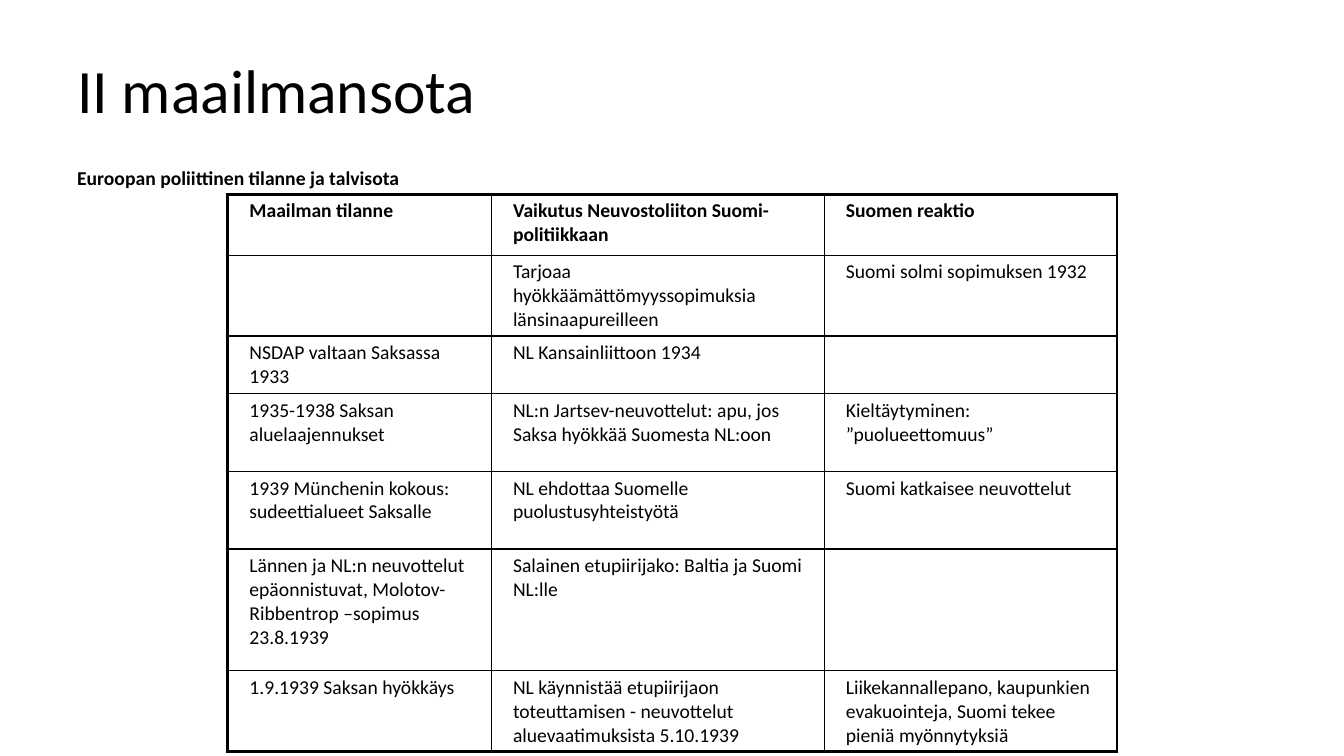
from lxml import etree
from pptx import Presentation
from pptx import util as u
from pptx.dml.color import RGBColor
from pptx.enum import text
from pptx.oxml.ns import qn

PX = 9525  # EMU per px, 96 px to the inch

TITLE = "II maailmansota"
SUBTITLE = "Euroopan poliittinen tilanne ja talvisota"
COLUMN_WIDTHS = [251, 317, 279]
ROW_HEIGHTS = [58, 77, 55, 74, 74, 116, 77]
ROWS = [
    ["Maailman tilanne", "Vaikutus Neuvostoliiton Suomi-politiikkaan", "Suomen reaktio"],
    ["", "Tarjoaa hyökkäämättömyyssopimuksia länsinaapureilleen",
     "Suomi solmi sopimuksen 1932"],
    ["NSDAP valtaan Saksassa 1933", "NL Kansainliittoon 1934", ""],
    ["1935-1938 Saksan aluelaajennukset",
     "NL:n Jartsev-neuvottelut: apu, jos Saksa hyökkää Suomesta NL:oon",
     "Kieltäytyminen: ”puolueettomuus”"],
    ["1939 Münchenin kokous: sudeettialueet Saksalle",
     "NL ehdottaa Suomelle puolustusyhteistyötä", "Suomi katkaisee neuvottelut"],
    ["Lännen ja NL:n neuvottelut epäonnistuvat, Molotov-Ribbentrop –sopimus 23.8.1939",
     "Salainen etupiirijako: Baltia ja Suomi NL:lle", ""],
    ["1.9.1939 Saksan hyökkäys",
     "NL käynnistää etupiirijaon toteuttamisen - neuvottelut aluevaatimuksista 5.10.1939",
     "Liikekannallepano, kaupunkien evakuointeja, Suomi tekee pieniä myönnytyksiä"],
]


def px(n):
    return u.Emu(n * PX)


def color(hex_string):
    return RGBColor.from_string(hex_string)


class SlideBuilder:
    font = "Calibri"
    ink = "000000"
    inner_line = 1
    outer_line = 2.25

    def __init__(self, slide):
        self.s = slide

    def style(self, p, size, bold=False):
        for r in p.runs:
            r.font.name = self.font
            r.font.size = u.Pt(size)
            r.font.bold = bold
            r.font.color.rgb = color(self.ink)

    def text_box(self, words, box, size, bold=False, anchor=text.MSO_ANCHOR.TOP):
        tf = self.s.shapes.add_textbox(*map(px, box)).text_frame
        tf.word_wrap = True
        tf.vertical_anchor = anchor
        p = tf.paragraphs[0]
        p.text = words
        p.line_spacing = 0.9
        self.style(p, size, bold)

    def border(self, cell, side, width):
        """Draw one cell edge; side is L, R, T or B."""
        ln = etree.SubElement(cell._tc.get_or_add_tcPr(), qn("a:ln" + side),
                              w=str(u.Pt(width)))
        fill = etree.SubElement(ln, qn("a:solidFill"))
        etree.SubElement(fill, qn("a:srgbClr"), val=self.ink)

    def table(self, rows, left, top, widths, heights, size):
        """Add a grid with thin inner lines, a thick frame and a bold first row."""
        box = (left, top, sum(widths), sum(heights))
        tbl = self.s.shapes.add_table(len(rows), len(widths), *map(px, box)).table
        tbl.first_row = tbl.horz_banding = False
        for column, width in zip(tbl.columns, widths):
            column.width = px(width)
        for row, height in zip(tbl.rows, heights):
            row.height = px(height)
        for i, row in enumerate(rows):
            for j, words in enumerate(row):
                cell = tbl.cell(i, j)
                on_frame = {"L": j == 0, "R": j == len(widths) - 1,
                            "T": i == 0, "B": i == len(rows) - 1}
                for side, outer in on_frame.items():
                    self.border(cell, side, self.outer_line if outer else self.inner_line)
                cell.fill.background()
                p = cell.text_frame.paragraphs[0]
                p.text = words
                p.space_before = u.Pt(4)
                p._p.get_or_add_pPr().set("marL", str(px(11)))
                self.style(p, size, bold=i == 0)


def main():
    prs = Presentation()
    prs.slide_width, prs.slide_height = px(1280), px(720)
    slide = SlideBuilder(prs.slides.add_slide(prs.slide_layouts[6]))
    slide.text_box(TITLE, (64, 29, 1152, 120), 44, anchor=text.MSO_ANCHOR.MIDDLE)
    slide.text_box(SUBTITLE, (64, 156, 565, 475), 14, bold=True)
    slide.table(ROWS, 217, 185, COLUMN_WIDTHS, ROW_HEIGHTS, 14)
    prs.save("out.pptx")


if __name__ == "__main__":
    main()
